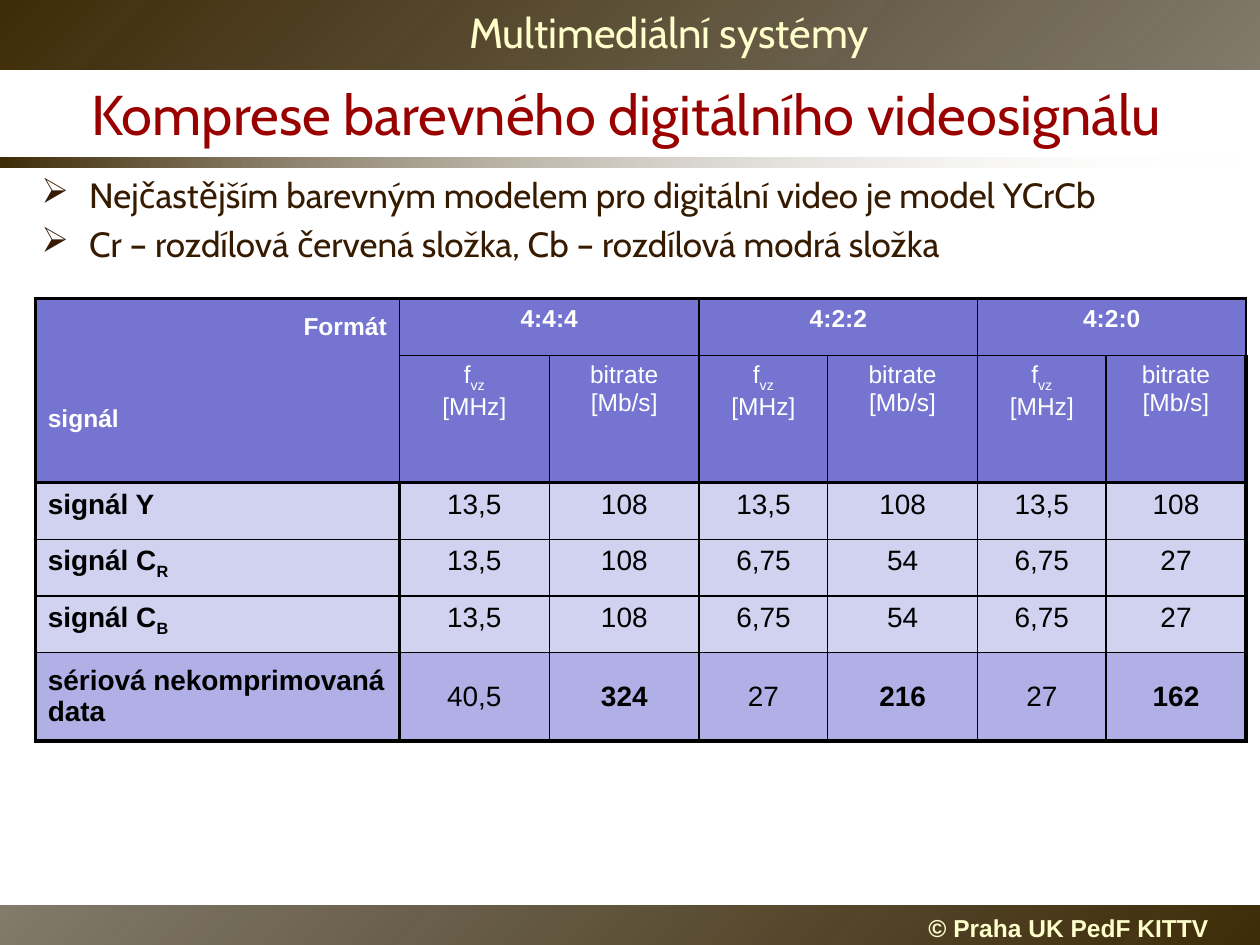
from dataclasses import dataclass

from lxml.etree import SubElement
from pptx import Presentation
from pptx.dml.color import RGBColor
from pptx.enum.shapes import MSO_SHAPE
from pptx.enum.text import MSO_ANCHOR, PP_ALIGN
from pptx.oxml import parse_xml
from pptx.oxml.ns import nsdecls, qn
from pptx.util import Emu, Inches, Pt

SLIDE_W, SLIDE_H = Inches(10), Inches(7.5)
CREAM, RED, BROWN = "FFFFCC", "990000", "361B00"
WHITE, BLACK = "FFFFFF", "000000"
HEADER_FILL, BODY_FILL, TOTAL_FILL = "7575D1", "D1D1F0", "B0B0E6"
THIN, THICK = 1, 2.25
HEADER_ROWS = 2


@dataclass
class Area:
    """A region in percent of the slide's width and height."""
    left: float
    top: float
    width: float
    height: float

    def emu(self) -> tuple:
        return (Emu(int(SLIDE_W * self.left / 100)), Emu(int(SLIDE_H * self.top / 100)),
                Emu(int(SLIDE_W * self.width / 100)), Emu(int(SLIDE_H * self.height / 100)))


@dataclass
class Band:
    """A gradient strip; each stop is (colour, opacity in percent)."""
    area: Area
    stops: tuple
    angle: int
    rotation: int = 0


@dataclass
class Style:
    font: str
    size: float
    color: str
    bold: bool = False


BAR_STOPS = (("2C1F06", 59), ("3E2C08", 100))
BANDS = [
    Band(Area(0, 95.87, 100, 4.53), BAR_STOPS, 45),
    Band(Area(0, 0, 100, 7.33), BAR_STOPS, 45, rotation=180),
    Band(Area(0, 16.67, 98.8, 1.07), (("3E2C08", 100), (WHITE, 0)), 0),
]

BULLETS = [
    "Nejčastějším barevným modelem pro digitální video je model YCrCb",
    "Cr – rozdílová červená složka, Cb – rozdílová modrá složka",
]

# Table content: "_" starts a subscript, a line break starts a paragraph
COLUMNS = [2.89, 1.19, 1.19, 1.02, 1.19, 1.02, 1.11]
ROWS = [0.45, 1.01, 0.45, 0.45, 0.45, 0.7]
CELLS = [
    ["Formát", "4:4:4", "", "4:2:2", "", "4:2:0", ""],
    ["signál"] + ["f_vz\n[MHz]", "bitrate\n[Mb/s]"] * 3,
    ["signál Y"] + ["13,5", "108"] * 3,
    ["signál C_R", "13,5", "108", "6,75", "54", "6,75", "27"],
    ["signál C_B", "13,5", "108", "6,75", "54", "6,75", "27"],
    ["sériová nekomprimovaná data", "40,5", "324", "27", "216", "27", "162"],
]
LAST_ROW, LAST_COL = len(ROWS) - 1, len(COLUMNS) - 1


def rgb(color: str) -> RGBColor:
    return RGBColor.from_string(color)


def format_run(run, style: Style) -> None:
    run.font.name, run.font.size, run.font.bold = style.font, Pt(style.size), style.bold
    run.font.color.rgb = rgb(style.color)


def format_frame(frame, style: Style, align, anchor) -> None:
    frame.word_wrap = True
    frame.vertical_anchor = anchor
    for paragraph in frame.paragraphs:
        paragraph.alignment = align
        for run in paragraph.runs:
            format_run(run, style)


def draw_band(slide, band: Band) -> None:
    strip = slide.shapes.add_shape(MSO_SHAPE.RECTANGLE, *band.area.emu())
    strip.shadow.inherit = False
    strip.rotation = band.rotation
    strip.line.fill.background()
    stops = "".join(
        f'<a:gs pos="{i * 100000}"><a:srgbClr val="{color}">'
        f'<a:alpha val="{opacity * 1000}"/></a:srgbClr></a:gs>'
        for i, (color, opacity) in enumerate(band.stops))
    gradient = parse_xml(
        f'<a:gradFill {nsdecls("a")} rotWithShape="1"><a:gsLst>{stops}</a:gsLst>'
        f'<a:lin ang="{band.angle * 60000}" scaled="1"/></a:gradFill>')
    strip._element.spPr.find(qn("a:prstGeom")).addnext(gradient)


def draw_text(slide, area: Area, text: str, style: Style,
              align=PP_ALIGN.LEFT, anchor=MSO_ANCHOR.TOP):
    frame = slide.shapes.add_textbox(*area.emu()).text_frame
    frame.text = text
    format_frame(frame, style, align, anchor)
    return frame


def add_text_shadow(run) -> None:
    fill = run._r.get_or_add_rPr().find(qn("a:solidFill"))
    fill.addnext(parse_xml(
        f'<a:effectLst {nsdecls("a")}><a:outerShdw dist="35921" dir="2700000">'
        f'<a:srgbClr val="{BLACK}"/></a:outerShdw></a:effectLst>'))


def add_bullet(paragraph, color: str) -> None:
    props = paragraph._p.get_or_add_pPr()
    props.set("marL", str(Inches(0.38)))
    props.set("indent", str(-Inches(0.38)))
    SubElement(SubElement(props, qn("a:buClr")), qn("a:srgbClr")).set("val", color)
    SubElement(props, qn("a:buChar")).set("char", "➢")


def cell_edges(row: int, col: int) -> dict:
    """Line width of each side; 0 leaves the side open."""
    body = row >= HEADER_ROWS
    label = col == 0
    return {
        "L": THICK if label or (body and col == 1) else THIN,
        "R": THICK if col == LAST_COL or (body and label) else THIN,
        "T": THICK if row in (0, HEADER_ROWS) else 0 if label and row == 1 else THIN,
        "B": THICK if row in (HEADER_ROWS - 1, LAST_ROW) else 0 if label and row == 0 else THIN,
    }


def draw_edges(cell, edges: dict) -> None:
    props = cell._tc.get_or_add_tcPr()
    for side, width in edges.items():
        line = SubElement(props, qn(f"a:ln{side}"), w=str(Pt(width)))
        if width:
            SubElement(SubElement(line, qn("a:solidFill")), qn("a:srgbClr")).set("val", BLACK)
        else:
            SubElement(line, qn("a:noFill"))


def fill_cell(cell, row: int, col: int) -> None:
    header, total = row < HEADER_ROWS, row == LAST_ROW
    label = col == 0
    draw_edges(cell, cell_edges(row, col))
    cell.fill.solid()
    cell.fill.fore_color.rgb = rgb(HEADER_FILL if header else TOTAL_FILL if total else BODY_FILL)
    cell.vertical_anchor = (MSO_ANCHOR.MIDDLE if total or (header and label)
                            else MSO_ANCHOR.TOP)

    bold = label or row == 0 or (total and col % 2 == 0)
    style = Style("Arial", 14 if header else 16, WHITE if header else BLACK, bold)
    frame = cell.text_frame
    frame.text = CELLS[row][col].replace("_", "")
    for paragraph, source in zip(frame.paragraphs, CELLS[row][col].split("\n")):
        paragraph.alignment = (PP_ALIGN.CENTER if not label
                               else PP_ALIGN.RIGHT if row == 0 else PP_ALIGN.LEFT)
        base, _, subscript = source.partition("_")
        if subscript:
            paragraph.runs[0].text = base
            lowered = paragraph.add_run()
            lowered.text = subscript
            lowered._r.get_or_add_rPr().set("baseline", "-25000")
        for run in paragraph.runs:
            format_run(run, style)


def draw_table(slide, area: Area) -> None:
    table = slide.shapes.add_table(len(ROWS), len(COLUMNS), *area.emu()).table
    table.first_row = table.horz_banding = False
    for column, width in zip(table.columns, COLUMNS):
        column.width = Inches(width)
    for row, height in zip(table.rows, ROWS):
        row.height = Inches(height)
    for col in range(1, len(COLUMNS), 2):
        table.cell(0, col).merge(table.cell(0, col + 1))
    for row in range(len(ROWS)):
        for col in range(len(COLUMNS)):
            fill_cell(table.cell(row, col), row, col)


def main() -> None:
    deck = Presentation()
    deck.slide_width, deck.slide_height = SLIDE_W, SLIDE_H
    slide = deck.slides.add_slide(deck.slide_layouts[5])

    # Header and footer bands with their captions
    for band in BANDS:
        draw_band(slide, band)
    course = draw_text(slide, Area(7.8, 0, 90.6, 6.67), "Multimediální systémy",
                       Style("Cabin", 24, CREAM), PP_ALIGN.CENTER)
    add_text_shadow(course.paragraphs[0].runs[0])
    draw_text(slide, Area(72.7, 95.87, 25.8, 4.53), "© Praha UK PedF KITTV",
              Style("Arial", 14, CREAM, bold=True), anchor=MSO_ANCHOR.MIDDLE)

    # Title
    title = slide.shapes.title
    title.left, title.top, title.width, title.height = Area(1.6, 7.33, 96.3, 9.33).emu()
    title.text_frame.text = "Komprese barevného digitálního videosignálu"
    format_frame(title.text_frame, Style("Cabin", 32, RED), PP_ALIGN.CENTER, MSO_ANCHOR.MIDDLE)

    # Bullets
    points = draw_text(slide, Area(2.3, 17.73, 95.3, 74.4), "\n".join(BULLETS),
                       Style("Cabin", 20, BROWN))
    for i, paragraph in enumerate(points.paragraphs):
        add_bullet(paragraph, BROWN)
        if i:
            paragraph.space_before = Pt(4)

    # Sampling formats
    draw_table(slide, Area(2.8, 31.6, 96.1, 46.53))

    deck.save("out.pptx")


if __name__ == "__main__":
    main()
